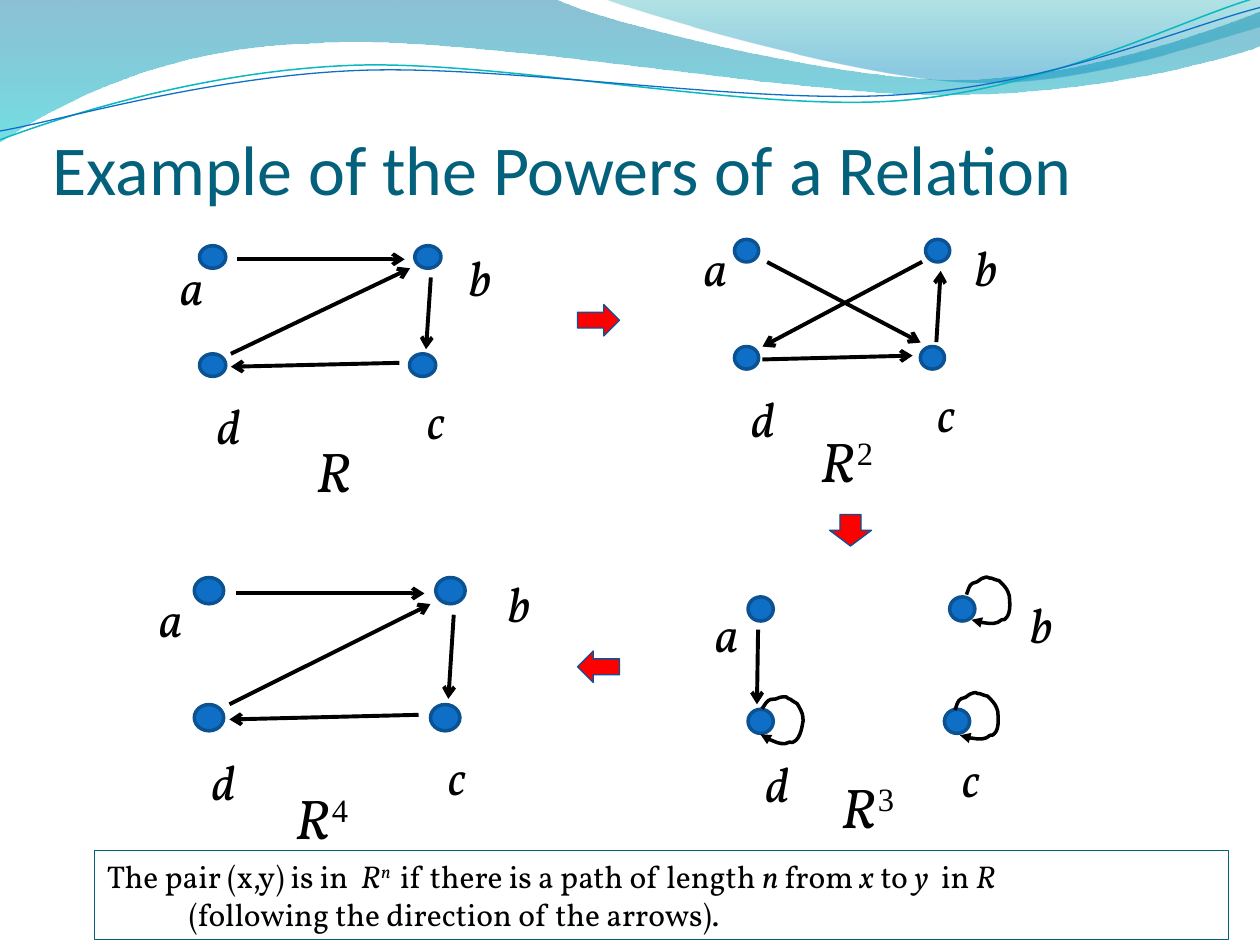
import pptx
import pptx.util
from lxml import etree
from pptx.dml.color import RGBColor
from pptx.enum.shapes import MSO_CONNECTOR, MSO_SHAPE
from pptx.enum.text import MSO_ANCHOR, MSO_AUTO_SIZE, PP_ALIGN
from pptx.oxml.ns import qn

BLACK = RGBColor(0x00, 0x00, 0x00)
BLUE = RGBColor(0x0F, 0x6F, 0xC6)
DARK_BLUE = RGBColor(0x0B, 0x52, 0x92)
STEP_BLUE = RGBColor(0x09, 0x52, 0x95)
RED = RGBColor(0xFF, 0x00, 0x00)
TEAL = RGBColor(0x04, 0x61, 0x7B)
AQUA = RGBColor(0x0A, 0xB8, 0xBF)
WAVE_BLUE = RGBColor(0x00, 0x74, 0xA1)
WAVE_CYAN = RGBColor(0x00, 0xC6, 0xCF)
WAVE_GREEN = RGBColor(0x00, 0xA1, 0xA9)
WAVE_SKY = RGBColor(0x00, 0x8B, 0xBF)

INCH = 914400
CELL = INCH / 12  # the slide is a grid of 120 columns and 90 rows

# Outlines: a start point, then (x, y) for a line or six numbers for a curve.
BACK_WAVE = [(0, 0), (4.4, -.01), (4.76, .17, 6.64, .63, 7.58, .63),
             (8.53, .63, 9.58, .26, 10, .09), (10.01, .36),
             (9.83, .44, 8.7, .76, 7.46, .75), (6.22, .75, 3.82, .28, 2.57, .34),
             (1.29, .36, .46, .83, -.01, 1.13), (0, 0)]
FRONT_WAVE = [(4.79, -.01), (5.09, .11, 6.82, .62, 7.69, .65),
              (8.56, .69, 9.61, .32, 10, .21), (10, 0), (4.79, -.01)]
AQUA_LINE = [(0, 1.11), (.48, .93, 1.58, .57, 2.77, .52),
             (3.95, .47, 5.93, .89, 7.13, .8), (8.33, .71, 9.38, .15, 9.98, -.02)]
BLUE_LINE = [(0, 1.04), (.47, .96, 1.64, .61, 2.83, .56),
             (4.03, .51, 5.97, .84, 7.17, .75), (8.36, .67, 9.41, .21, 10, .06)]
LOOP = [(0, .14), (.01, .12, .02, .06, .05, .05), (.06, .05, .07, .05, .08, .04),
        (.09, .04, .09, .03, .11, .02), (.12, .01, .16, 0, .16, 0),
        (.18, .01, .19, .01, .2, .01), (.22, .02, .26, .03, .26, .03),
        (.29, .06, .32, .09, .33, .12), (.34, .15), (.34, .17, .36, .29, .31, .33),
        (.31, .34, .29, .34, .28, .34), (.27, .35, .26, .35, .25, .36),
        (.2, .38, .15, .36, .1, .36), (.04, .34)]

# Arrow ends as shares of the box around the four dots
EDGES = {"ab": (.155, .104, .85, .104), "db": (.13, .827, .872, .173),
         "bc": (.958, .243, .938, .792), "cd": (.828, .896, .13, .926),
         "ac": (.152, .175, .865, .796), "ad": (.044, .24, .039, .787)}

# Boxes and offsets in cells
PANELS = [
    dict(box=(19, 23.4, 23, 12.45), dot=(2.5, 2.15), a=(-3, .45), b=(24.5, -.4),
         edges="ab db bc cd", power="", name_at=(29, 41)),
    dict(box=(69.95, 22.8, 20.5, 12.35), dot=(2.3, 2.15), a=(-4, -.8), b=(21.8, -.8),
         edges="bd cb dc ac", power="2", name_at=(77, 40)),
    dict(box=(71.25, 56.85, 21.6, 13), dot=(2.4, 2.3), a=(-4.3, 0), b=(25.7, -.8),
         edges="ad", power="3", name_at=(79, 73),
         loops={"b": (1.6, -1.9, 0), "c": (1, -1.6, 0), "d": (1.1, -1.2, 14.7)}),
    dict(box=(18.5, 55, 25.8, 14.6), dot=(2.8, 2.5), a=(-4.5, .5), b=(28.7, -1),
         edges="ab db bc cd", power="4", name_at=(27, 74)),
]
STEPS = [(MSO_SHAPE.RIGHT_ARROW, 55, 29, 0), (MSO_SHAPE.DOWN_ARROW, 79, 49, 0),
         (MSO_SHAPE.RIGHT_ARROW, 55, 62, 180)]


def cells(*values):
    return [round(v * CELL) for v in values]


def set_line(shape, color, width, head=None):
    shape.line.color.rgb = color
    shape.line.width = pptx.util.Pt(width)
    if head:
        ln = shape._element.spPr.get_or_add_ln()
        etree.SubElement(ln, qn("a:tailEnd"), type=head)


def add_run(p, text, size, color=BLACK, name="Vollkorn", italic=False, raised=False):
    r = p.add_run()
    r.text = text
    r.font.color.rgb = color
    for key, value in dict(size=pptx.util.Pt(size), name=name, italic=italic).items():
        setattr(r.font, key, value)
    if raised:
        r._r.get_or_add_rPr().set("baseline", "30000")


def add_outline(s, outline, left=0, top=0, close=False):
    """Draw lines and curves given in inches, moved by left and top in EMU."""
    points = [(round(left + seg[i] * INCH), round(top + seg[i + 1] * INCH))
              for seg in outline for i in range(0, len(seg), 2)]
    fb = s.shapes.build_freeform(*points[0], scale=1.0)
    fb.add_line_segments(points[1:], close=close)
    sp = fb.convert_to_shape()
    lines = iter(list(sp._element.spPr.iter(qn("a:lnTo"))))
    for seg in outline[1:]:
        first = next(lines)
        if len(seg) == 6:
            first.tag = qn("a:cubicBezTo")
            for extra in (next(lines), next(lines)):
                first.append(extra[0])
                extra.getparent().remove(extra)
    sp.shadow.inherit = False
    sp.fill.background()
    return sp


def add_waves(s):
    for outline, stops in (
            (BACK_WAVE, ((0, WAVE_BLUE, 45), (1, WAVE_CYAN, 55))),
            (FRONT_WAVE, ((0, WAVE_GREEN, 30), (.8, WAVE_SKY, 45)))):
        sp = add_outline(s, outline, close=True)
        sp.line.fill.background()
        sp.fill.gradient()
        sp.fill.gradient_angle = 270
        for stop, (position, color, _) in zip(sp.fill.gradient_stops, stops):
            stop.position = position
            stop.color.rgb = color
        for clr, stop in zip(sp._element.spPr.iter(qn("a:srgbClr")), stops):
            etree.SubElement(clr, qn("a:alpha"), val=str(stop[2] * 1000))
    for outline, color, width in ((AQUA_LINE, AQUA, .85), (BLUE_LINE, BLUE, .75)):
        set_line(add_outline(s, outline), color, width)


def add_title(s, box):
    title = s.shapes.title
    title.left, title.top, title.width, title.height = cells(*box)
    tf = title.text_frame
    for key, value in dict(margin_left=0, margin_right=0, margin_bottom=0, word_wrap=True,
                           auto_size=MSO_AUTO_SIZE.NONE,
                           vertical_anchor=MSO_ANCHOR.BOTTOM).items():
        setattr(tf, key, value)
    tf.paragraphs[0].alignment = PP_ALIGN.LEFT
    add_run(tf.paragraphs[0], "Example of the Powers of a Relation", 40, TEAL, "Calibri")


def add_label(s, box, text, size, power=""):
    tf = s.shapes.add_textbox(*cells(*box)).text_frame
    tf.word_wrap = True
    tf.auto_size = MSO_AUTO_SIZE.SHAPE_TO_FIT_TEXT
    add_run(tf.paragraphs[0], text, size, italic=True)
    if power:
        add_run(tf.paragraphs[0], power, size, name="Times New Roman", raised=True)


def add_graph(s, box, dot, a, b, edges, power, name_at, loops=None):
    """Place the dots, letters, arrows and name of one directed graph."""
    left, top, width, height = box
    w, h = dot
    right, low = left + width - w, top + height - h
    dots = {"a": (left, top), "b": (right, top), "c": (right - .5, low), "d": (left, low)}
    letters = {"a": (left + a[0], top + a[1]), "b": (left + b[0], top + b[1]),
               "c": (right, low + 1.4 * h - .1), "d": (left + .5, low + 1.4 * h + .4)}
    for x, y in dots.values():
        sp = s.shapes.add_shape(MSO_SHAPE.OVAL, *cells(x, y, w, h))
        sp.shadow.inherit = False
        sp.fill.solid()
        sp.fill.fore_color.rgb = BLUE
        set_line(sp, DARK_BLUE, 2)
    for letter, (x, y) in letters.items():
        add_label(s, (x, y, w, 1.3 * h), letter, 28)
    for edge in edges.split():
        x1, y1, x2, y2 = EDGES.get(edge) or EDGES[edge[::-1]][2:] + EDGES[edge[::-1]][:2]
        line = s.shapes.add_connector(MSO_CONNECTOR.STRAIGHT, *cells(
            left + x1 * width, top + y1 * height, left + x2 * width, top + y2 * height))
        set_line(line, BLACK, 2.25, "arrow")
        etree.SubElement(line._element.spPr, qn("a:effectLst"))
    for node, (dx, dy, angle) in (loops or {}).items():
        sp = add_outline(s, LOOP, *cells(dots[node][0] + dx, dots[node][1] + dy))
        sp.rotation = angle
        set_line(sp, BLACK, 2, "triangle")
    add_label(s, (*name_at, 10 if power else w, 7.7), "R", 32, power)


def add_step_arrow(s, kind, left, top, angle):
    sp = s.shapes.add_shape(kind, *cells(left, top, 4, 3))
    sp.rotation = angle
    sp.shadow.inherit = False
    sp.fill.solid()
    sp.fill.fore_color.rgb = RED
    set_line(sp, STEP_BLUE, .75)


def add_note(s, box):
    sp = s.shapes.add_shape(MSO_SHAPE.RECTANGLE, *cells(*box))
    sp.shadow.inherit = False
    sp.fill.background()
    set_line(sp, TEAL, .75)
    tf = sp.text_frame
    tf.word_wrap = True
    tf.vertical_anchor = MSO_ANCHOR.TOP
    p, p2 = tf.paragraphs[0], tf.add_paragraph()
    p.alignment = p2.alignment = PP_ALIGN.LEFT
    for text, italic, raised in (
            ("The pair (x,y) is in  ", False, False), ("R", True, False), ("n ", True, True),
            (" if there is a path of length ", False, False), ("n", True, False),
            (" from ", False, False), ("x", True, False), (" to ", False, False),
            ("y", True, False), ("  in ", False, False), ("R", True, False)):
        add_run(p, text, 18, italic=italic, raised=raised)
    p2._p.get_or_add_pPr().set("marL", str(round(.65 * INCH)))
    add_run(p2, "(following the direction of the arrows).", 18)


def main():
    prs = pptx.Presentation()
    prs.slide_width, prs.slide_height = cells(120, 90)
    s = prs.slides.add_slide(prs.slide_layouts[5])
    add_waves(s)
    add_title(s, (5, 5, 108, 15))
    for panel in PANELS:
        add_graph(s, **panel)
    for step in STEPS:
        add_step_arrow(s, *step)
    add_note(s, (9, 81, 108, 8.5))
    prs.save("out.pptx")


if __name__ == "__main__":
    main()
